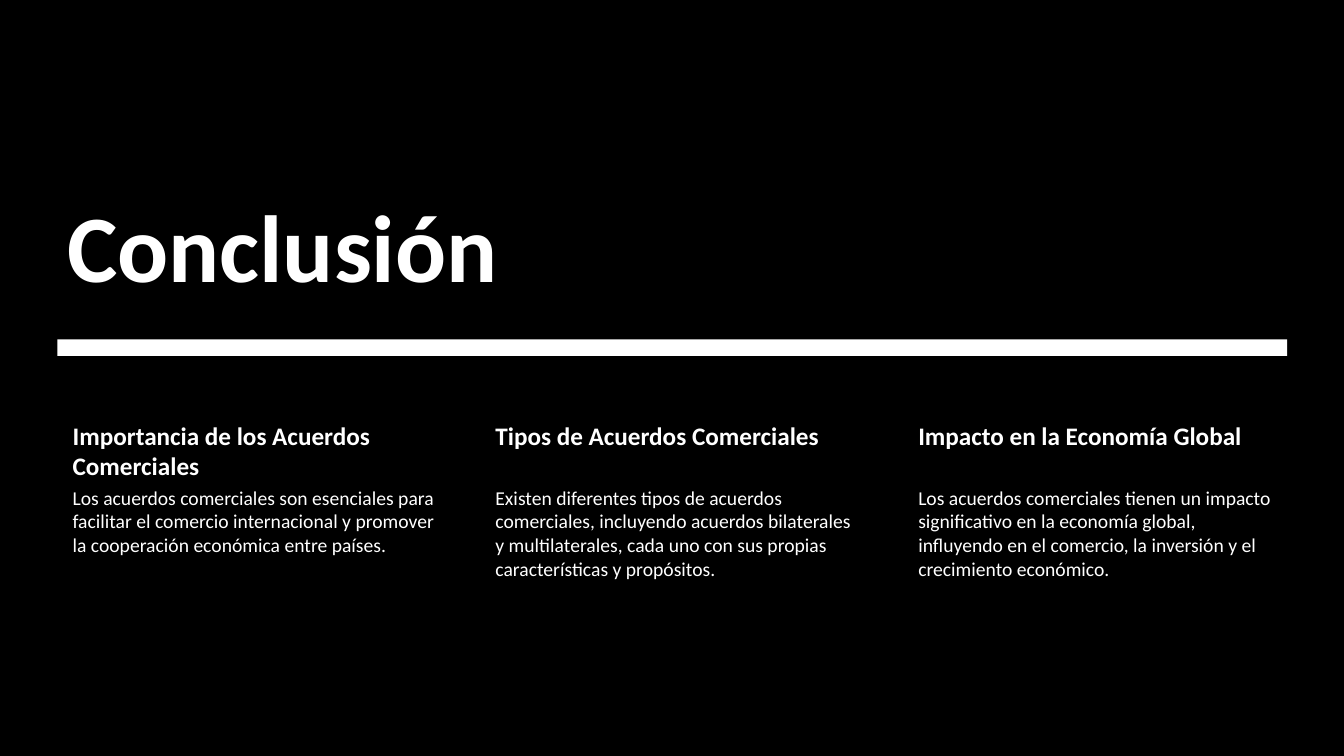
"""Build the closing slide: a title, a rule and three columns of conclusions."""
from dataclasses import dataclass

import pptx
import pptx.dml.color
import pptx.enum.shapes
import pptx.enum.text
import pptx.util

Pt = pptx.util.Pt
SLIDE_WIDTH, SLIDE_HEIGHT = 960, 540
MARGIN = 41.04
CONTENT_WIDTH = 878.4
COLUMN_WIDTH = 274.32
COLUMN_STEP = (CONTENT_WIDTH - COLUMN_WIDTH) / 2
BLACK, WHITE = "000000", "FFFFFF"


@dataclass(frozen=True)
class Box:
    left: float
    top: float
    width: float
    height: float


@dataclass(frozen=True)
class TextStyle:
    size: float
    bold: bool
    insets: tuple[float, float, float, float]
    anchor: pptx.enum.text.MSO_ANCHOR = pptx.enum.text.MSO_ANCHOR.TOP


@dataclass(frozen=True)
class Conclusion:
    heading: str
    body: str


TITLE = TextStyle(68, True, (7.2, 3.6, 7.2, 0), pptx.enum.text.MSO_ANCHOR.BOTTOM)
HEADING = TextStyle(18, True, (10.8, 2.16, 2.16, 2.16))
BODY = TextStyle(14, False, (10.8, 1.44, 1.44, 1.44))

CONCLUSIONS = [
    Conclusion(
        "Importancia de los Acuerdos Comerciales",
        "Los acuerdos comerciales son esenciales para facilitar el comercio "
        "internacional y promover la cooperación económica entre países.",
    ),
    Conclusion(
        "Tipos de Acuerdos Comerciales",
        "Existen diferentes tipos de acuerdos comerciales, incluyendo acuerdos "
        "bilaterales y multilaterales, cada uno con sus propias características "
        "y propósitos.",
    ),
    Conclusion(
        "Impacto en la Economía Global",
        "Los acuerdos comerciales tienen un impacto significativo en la economía "
        "global, influyendo en el comercio, la inversión y el crecimiento económico.",
    ),
]


def color(value: str) -> pptx.dml.color.RGBColor:
    return pptx.dml.color.RGBColor.from_string(value)


def add_rectangle(slide: pptx.slide.Slide, box: Box, fill: str) -> None:
    shape = slide.shapes.add_shape(
        pptx.enum.shapes.MSO_SHAPE.RECTANGLE,
        Pt(box.left), Pt(box.top), Pt(box.width), Pt(box.height),
    )
    shape.shadow.inherit = False
    shape.fill.solid()
    shape.fill.fore_color.rgb = color(fill)
    shape.line.fill.background()


def add_text(slide: pptx.slide.Slide, box: Box, text: str, style: TextStyle) -> None:
    shape = slide.shapes.add_textbox(
        Pt(box.left), Pt(box.top), Pt(box.width), Pt(box.height)
    )
    frame = shape.text_frame
    frame.word_wrap = True
    frame.vertical_anchor = style.anchor
    left, top, right, bottom = style.insets
    frame.margin_left, frame.margin_top = Pt(left), Pt(top)
    frame.margin_right, frame.margin_bottom = Pt(right), Pt(bottom)
    run = frame.paragraphs[0].add_run()
    run.text = text
    run.font.name = "Calibri"
    run.font.size = Pt(style.size)
    run.font.bold = style.bold
    run.font.color.rgb = color(WHITE)


def main() -> None:
    presentation = pptx.Presentation()
    presentation.slide_width = Pt(SLIDE_WIDTH)
    presentation.slide_height = Pt(SLIDE_HEIGHT)
    slide = presentation.slides.add_slide(presentation.slide_layouts[6])
    slide.background.fill.solid()
    slide.background.fill.fore_color.rgb = color(BLACK)

    add_rectangle(slide, Box(0, 0, SLIDE_WIDTH, SLIDE_HEIGHT), BLACK)
    add_rectangle(slide, Box(MARGIN, 242.4, CONTENT_WIDTH, 11.8), WHITE)
    add_text(slide, Box(MARGIN, 104.4, CONTENT_WIDTH, 110.88), "Conclusión", TITLE)
    for index, conclusion in enumerate(CONCLUSIONS):
        left = MARGIN + index * COLUMN_STEP
        add_text(slide, Box(left, 298.08, COLUMN_WIDTH, 47.52), conclusion.heading, HEADING)
        add_text(slide, Box(left, 345.6, COLUMN_WIDTH, 146.88), conclusion.body, BODY)

    presentation.save("out.pptx")


if __name__ == "__main__":
    main()
